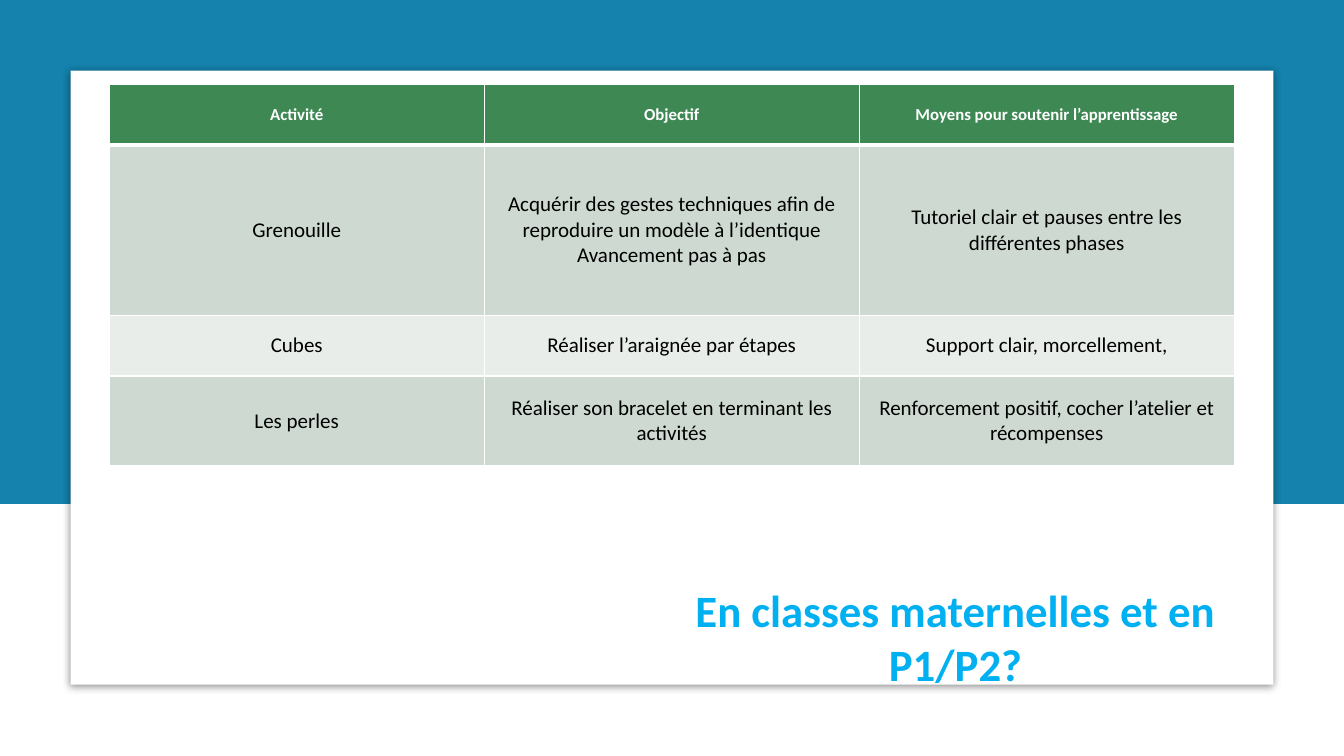
from dataclasses import dataclass

from lxml.etree import SubElement
from pptx import Presentation
from pptx.dml.color import RGBColor
from pptx.enum.shapes import MSO_SHAPE
from pptx.enum.text import MSO_ANCHOR as Anchor, PP_ALIGN as Align
from pptx.oxml.ns import qn
from pptx.util import Pt

FONT = "Calibri"
WHITE = "FFFFFF"
GREEN, SAGE, PALE = "3E8853", "CEDAD1", "E8EDE9"
COLUMN_WIDTH = 267.9
WIDE_INSETS = {"margin_left": 9.6, "margin_right": 9.6,
               "margin_top": 4.8, "margin_bottom": 4.8}
HEADER_FORMAT = {"size": Pt(12), "bold": True}
BODY_FORMAT = {"size": Pt(15), "bold": False}
TITLE_FORMAT = {"size": Pt(32), "bold": True}


@dataclass
class Panel:
    left: float
    top: float
    width: float
    height: float
    fill: str


@dataclass
class ActivityRow:
    height: float
    fill: str
    texts: tuple[str, ...]
    wide_insets: bool = False


PANELS = [
    Panel(0, 0, 960, 360, "1482AC"),
    Panel(50.4, 50.4, 859.2, 438.6, WHITE),
]
ROWS = [
    ActivityRow(43, GREEN, ("Activité", "Objectif",
                            "Moyens pour soutenir l’apprentissage"), True),
    ActivityRow(121.7, SAGE, (
        "Grenouille",
        "Acquérir des gestes techniques afin de reproduire un modèle à l’identique\n"
        "Avancement pas à pas",
        "Tutoriel clair et pauses entre les différentes phases"), True),
    ActivityRow(43.4, PALE, ("Cubes", "Réaliser l’araignée par étapes",
                             "Support clair, morcellement,")),
    ActivityRow(64.3, SAGE, ("Les perles",
                             "Réaliser son bracelet en terminant les activités",
                             "Renforcement positif, cocher l’atelier et récompenses")),
]


def color(value: str) -> RGBColor:
    return RGBColor.from_string(value)


def write_text(frame, text: str, format_values: dict, font_color: str) -> None:
    frame.text = text
    frame.word_wrap = True
    for paragraph in frame.paragraphs:
        paragraph.alignment = Align.CENTER
        for run in paragraph.runs:
            run.font.name = FONT
            run.font.color.rgb = color(font_color)
            for name, value in format_values.items():
                setattr(run.font, name, value)


def add_panel(slide, panel: Panel):
    shape = slide.shapes.add_shape(
        MSO_SHAPE.RECTANGLE, Pt(panel.left), Pt(panel.top),
        Pt(panel.width), Pt(panel.height))
    shape.shadow.inherit = False
    shape.fill.solid()
    shape.fill.fore_color.rgb = color(panel.fill)
    shape.line.fill.background()
    return shape


def add_soft_shadow(shape) -> None:
    effects = shape.element.spPr.find(qn("a:effectLst"))
    shadow = SubElement(effects, qn("a:outerShdw"), blurRad=str(Pt(5)),
                        dist=str(Pt(1.4)), dir="5400000", rotWithShape="0")
    tone = SubElement(shadow, qn("a:srgbClr"), val="000000")
    SubElement(tone, qn("a:alpha"), val="43000")


def add_borders(cell, widths: dict[str, float]) -> None:
    properties = cell._tc.get_or_add_tcPr()
    for index, (side, width) in enumerate(widths.items()):
        line = SubElement(properties, qn(f"a:{side}"), w=str(Pt(width)))
        fill = SubElement(line, qn("a:solidFill"))
        SubElement(fill, qn("a:srgbClr"), val=WHITE)
        properties.insert(index, line)


def add_activity_table(slide) -> None:
    column_count = len(ROWS[0].texts)
    table = slide.shapes.add_table(
        len(ROWS), column_count, Pt(78), Pt(60.5),
        Pt(COLUMN_WIDTH * column_count), Pt(sum(row.height for row in ROWS))).table
    for column in table.columns:
        column.width = Pt(COLUMN_WIDTH)
    for row_index, row in enumerate(ROWS):
        table.rows[row_index].height = Pt(row.height)
        is_header = row_index == 0
        for column_index, text in enumerate(row.texts):
            cell = table.cell(row_index, column_index)
            cell.fill.solid()
            cell.fill.fore_color.rgb = color(row.fill)
            cell.vertical_anchor = Anchor.MIDDLE
            if row.wide_insets:
                for name, value in WIDE_INSETS.items():
                    setattr(cell, name, Pt(value))
            write_text(cell.text_frame, text,
                       HEADER_FORMAT if is_header else BODY_FORMAT,
                       WHITE if is_header else "000000")
            add_borders(cell, {"lnL": 1, "lnR": 1,
                               "lnT": 3 if row_index == 1 else 1,
                               "lnB": 3 if is_header else 1})


def main() -> None:
    presentation = Presentation()
    presentation.slide_width, presentation.slide_height = Pt(960), Pt(540)
    slide = presentation.slides.add_slide(presentation.slide_layouts[6])

    # Blue band and white card
    band, card = [add_panel(slide, panel) for panel in PANELS]
    add_soft_shadow(card)

    # Title
    title = slide.shapes.add_textbox(Pt(469.4), Pt(412.6), Pt(426.2), Pt(85))
    write_text(title.text_frame, "En classes maternelles et en P1/P2?",
               TITLE_FORMAT, "00B0F0")

    # Activities
    add_activity_table(slide)
    presentation.save("out.pptx")


if __name__ == "__main__":
    main()
